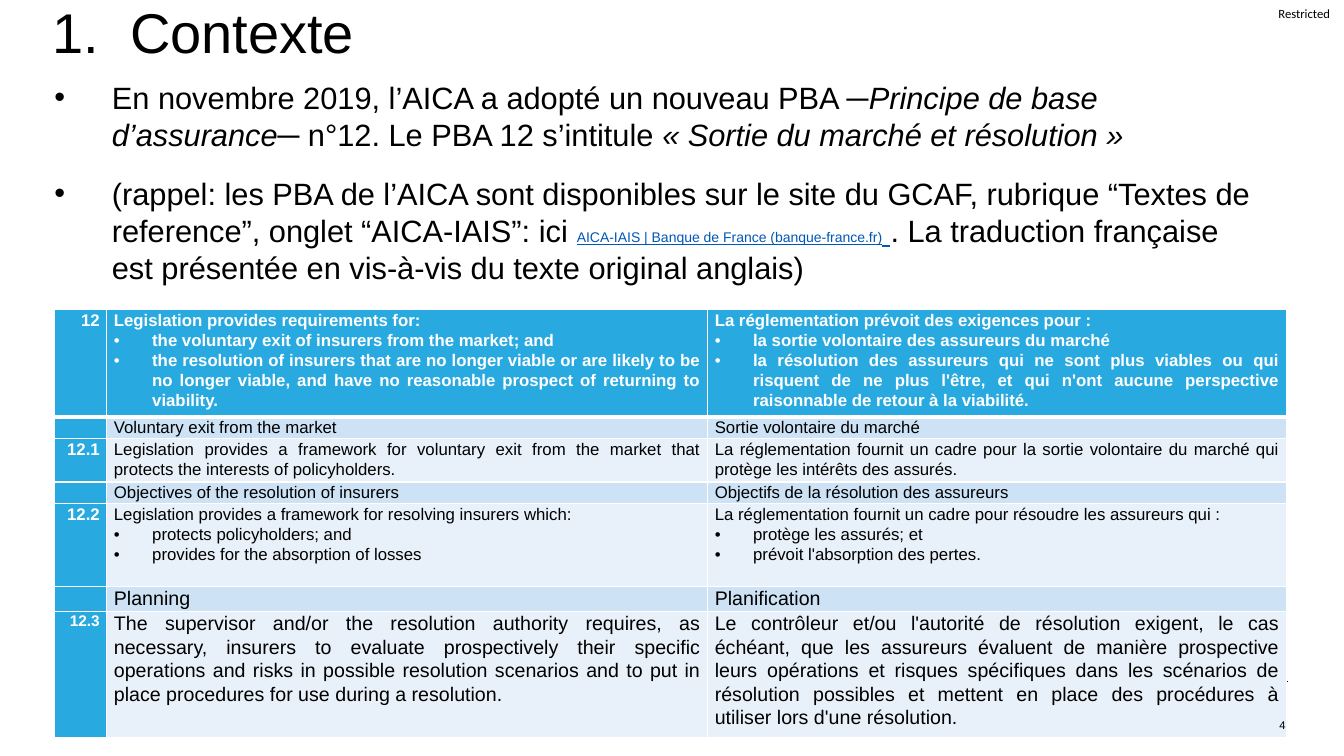
from dataclasses import dataclass

from pptx import Presentation
from pptx.dml.color import RGBColor
from pptx.enum.shapes import MSO_CONNECTOR
from pptx.enum.text import MSO_ANCHOR, PP_ALIGN
from pptx.oxml.xmlchemy import OxmlElement
from pptx.util import Emu, Pt

PX = 9144  # 100 px to the inch
COLORS = {
    "black": "000000",
    "white": "FFFFFF",
    "link": "0057B8",
    "accent": "28AAE1",
    "section": "CDE2F4",
    "detail": "E8F1F9",
}


@dataclass
class Span:
    text: str
    size: int = 12
    color: str = "black"
    bold: bool = False
    italic: bool = False
    underline: bool = False
    font: str = "Arial"


@dataclass
class Box:
    left: int
    top: int
    width: int
    height: int
    margins: tuple[int, int, int, int] = (0, 5, 10, 5)
    anchor: MSO_ANCHOR = MSO_ANCHOR.TOP


@dataclass
class Row:
    height: int
    number: str
    english: list[str]  # the first line is plain, the others are bullets
    french: list[str]
    fill: str = "detail"
    size: int = 12
    number_size: int = 12


def px(length: int) -> Emu:
    return Emu(length * PX)


def add_spans(paragraph, spans: list[Span]) -> None:
    for span in spans:
        run = paragraph.add_run()
        run.text = span.text
        font = run.font
        font.name, font.size = span.font, Pt(span.size)
        font.bold, font.italic, font.underline = span.bold, span.italic, span.underline
        font.color.rgb = RGBColor.from_string(COLORS[span.color])


def end_paragraph(paragraph, size: int) -> None:
    ending = OxmlElement("a:endParaRPr")
    ending.set("sz", str(size * 100))
    paragraph._p.append(ending)


def add_bullet(paragraph, indent: int) -> None:
    properties = paragraph._p.get_or_add_pPr()
    properties.set("marL", str(px(indent)))
    properties.set("indent", str(px(-indent)))
    for tag, name, value in (("a:buFont", "typeface", "Arial"), ("a:buChar", "char", "•")):
        element = OxmlElement(tag)
        element.set(name, value)
        properties.append(element)


def add_tab_stop(paragraph, position: int) -> None:
    tabs = OxmlElement("a:tabLst")
    tab = OxmlElement("a:tab")
    tab.set("pos", str(px(position)))
    tab.set("algn", "l")
    tabs.append(tab)
    paragraph._p.get_or_add_pPr().append(tabs)


def add_text_box(slide, box: Box):
    shape = slide.shapes.add_textbox(px(box.left), px(box.top), px(box.width), px(box.height))
    frame = shape.text_frame
    frame.word_wrap = True
    frame.vertical_anchor = box.anchor
    (frame.margin_left, frame.margin_top,
     frame.margin_right, frame.margin_bottom) = map(px, box.margins)
    return frame


def add_label(slide, box: Box, span: Span) -> None:
    paragraph = add_text_box(slide, box).paragraphs[0]
    paragraph.alignment = PP_ALIGN.RIGHT
    add_spans(paragraph, [span])


def add_rule(slide, left: int, right: int, top: int) -> None:
    rule = slide.shapes.add_connector(MSO_CONNECTOR.STRAIGHT, px(left), px(top), px(right), px(top))
    rule.line.color.rgb = RGBColor.from_string(COLORS["black"])
    rule.line.width = Pt(0.5)
    rule._element.spPr.append(OxmlElement("a:effectLst"))


def set_borders(cell, top: int, bottom: int) -> None:
    properties = cell._tc.get_or_add_tcPr()
    widths = {"a:lnL": 1, "a:lnR": 1, "a:lnT": top, "a:lnB": bottom}
    for position, (tag, width) in enumerate(widths.items()):
        line = OxmlElement(tag)
        line.set("w", str(Pt(width)))
        fill = OxmlElement("a:solidFill")
        color = OxmlElement("a:srgbClr")
        color.set("val", COLORS["white"])
        fill.append(color)
        line.append(fill)
        properties.insert(position, line)


def fill_cell(cell, lines: list[str], style: Span, fill: str, alignment: PP_ALIGN) -> None:
    cell.margin_left = cell.margin_right = px(7)
    cell.margin_top = cell.margin_bottom = 0
    cell.fill.solid()
    cell.fill.fore_color.rgb = RGBColor.from_string(COLORS[fill])
    frame = cell.text_frame
    for index, text in enumerate(lines):
        paragraph = frame.add_paragraph() if index else frame.paragraphs[0]
        paragraph.alignment = alignment
        paragraph.line_spacing = 1.07
        paragraph.space_before = paragraph.space_after = Pt(0)
        if index:
            add_bullet(paragraph, 38)
        add_spans(paragraph, [Span(text, style.size, style.color, style.bold)])
    for paragraph in frame.paragraphs:
        end_paragraph(paragraph, style.size)


def add_comparison_table(slide, box: Box, columns: list[int], rows: list[Row]) -> None:
    table = slide.shapes.add_table(len(rows), len(columns), px(box.left), px(box.top),
                                   px(box.width), px(box.height)).table
    for column, width in zip(table.columns, columns):
        column.width = px(width)
    for index, row in enumerate(rows):
        table.rows[index].height = px(row.height)
        header = row.fill == "accent"
        number = Span("", row.number_size, "white", True)
        body = Span("", row.size, "white" if header else "black", header)
        cells = table.rows[index].cells
        fill_cell(cells[0], [row.number] if row.number else [], number, "accent", PP_ALIGN.RIGHT)
        for cell, lines in ((cells[1], row.english), (cells[2], row.french)):
            fill_cell(cell, lines, body, row.fill, PP_ALIGN.JUSTIFY)
        for cell in cells:
            set_borders(cell, 3 if index == 1 else 1, 3 if header else 1)


BULLETS = [
    [Span("En novembre 2019, l’AICA a adopté un nouveau PBA ─", 22),
     Span("Principe de base d’assurance", 22, italic=True),
     Span("─ n°12. Le PBA 12 s’intitule ", 22),
     Span("« Sortie du marché et résolution »", 22, italic=True)],
    [Span("(rappel: les PBA de l’AICA sont disponibles sur le site du GCAF, rubrique "
          "“Textes de reference”, onglet “AICA-IAIS”: ici ", 22),
     Span("AICA-IAIS | Banque de France (banque-france.fr)", 10, "link", underline=True),
     Span(" ", 22, "link", underline=True),
     Span(". La traduction française est présentée en vis-à-vis du texte original anglais)", 22)],
]

ROWS = [
    Row(103, "12",
        ["Legislation provides requirements for:",
         "the voluntary exit of insurers from the market; and",
         "the resolution of insurers that are no longer viable or are likely to be no longer "
         "viable, and have no reasonable prospect of returning to viability."],
        ["La réglementation prévoit des exigences pour :",
         "la sortie volontaire des assureurs du marché",
         "la résolution des assureurs qui ne sont plus viables ou qui risquent de ne plus l'être, "
         "et qui n'ont aucune perspective raisonnable de retour à la viabilité."], "accent"),
    Row(21, "", ["Voluntary exit from the market"], ["Sortie volontaire du marché"], "section"),
    Row(41, "12.1",
        ["Legislation provides a framework for voluntary exit from the market that protects "
         "the interests of policyholders."],
        ["La réglementation fournit un cadre pour la sortie volontaire du marché qui protège "
         "les intérêts des assurés."]),
    Row(21, "", ["Objectives of the resolution of insurers"],
        ["Objectifs de la résolution des assureurs"], "section"),
    Row(82, "12.2",
        ["Legislation provides a framework for resolving insurers which:",
         "protects policyholders; and", "provides for the absorption of losses"],
        ["La réglementation fournit un cadre pour résoudre les assureurs qui :",
         "protège les assurés; et", "prévoit l'absorption des pertes."]),
    Row(21, "", ["Planning"], ["Planification"], "section", 14),
    Row(82, "12.3",
        ["The supervisor and/or the resolution authority requires, as necessary, insurers to "
         "evaluate prospectively their specific operations and risks in possible resolution "
         "scenarios and to put in place procedures for use during a resolution."],
        ["Le contrôleur et/ou l'autorité de résolution exigent, le cas échéant, que les assureurs "
         "évaluent de manière prospective leurs opérations et risques spécifiques dans les "
         "scénarios de résolution possibles et mettent en place des procédures à utiliser lors "
         "d'une résolution."], "detail", 14, 11),
]


def main() -> None:
    presentation = Presentation()
    presentation.slide_width, presentation.slide_height = px(1333), px(750)
    slide = presentation.slides.add_slide(presentation.slide_layouts[6])

    # Footer rule, classification and title
    add_rule(slide, 56, 1277, 676)
    add_label(slide, Box(1239, 0, 80, 27, (0, 0, 0, 0), MSO_ANCHOR.MIDDLE),
              Span("Restricted", 9, font="Calibri"))
    title = add_text_box(slide, Box(52, 0, 1224, 73)).paragraphs[0]
    title.line_spacing = 0.9
    add_tab_stop(title, 77)
    add_spans(title, [Span("1.\tContexte", 40)])

    # Bulleted context
    frame = add_text_box(slide, Box(54, 73, 1220, 219, (0, 5, 22, 5)))
    for index, spans in enumerate(BULLETS):
        paragraph = frame.add_paragraph() if index else frame.paragraphs[0]
        paragraph.space_before = Pt(4 if index else 0)
        paragraph.space_after = Pt(12)
        add_bullet(paragraph, 57)
        add_spans(paragraph, spans)
        end_paragraph(paragraph, 22)

    # Bilingual table and page number
    add_comparison_table(slide, Box(54, 307, 1222, 371), [52, 596, 574], ROWS)
    add_label(slide, Box(776, 699, 512, 40, (10, 5, 10, 5), MSO_ANCHOR.MIDDLE), Span("4 ", 8))

    presentation.save("out.pptx")


if __name__ == "__main__":
    main()
